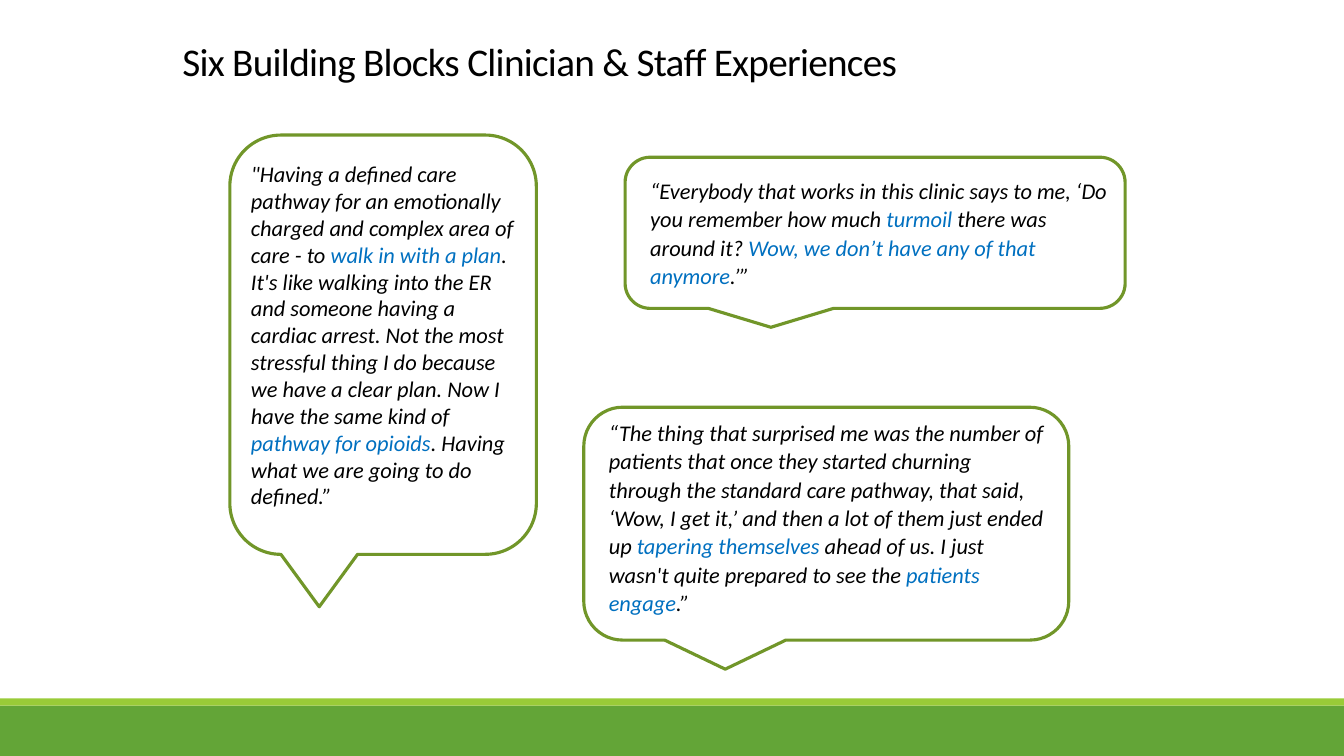
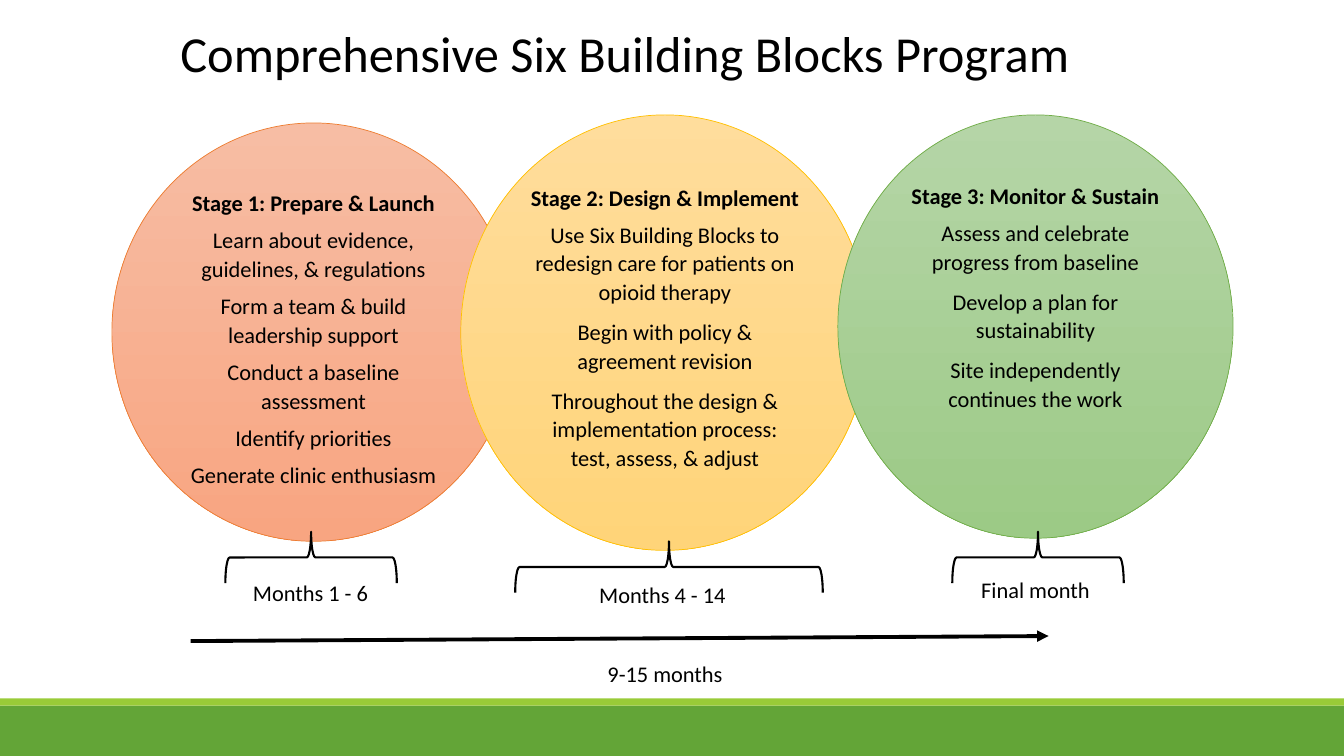
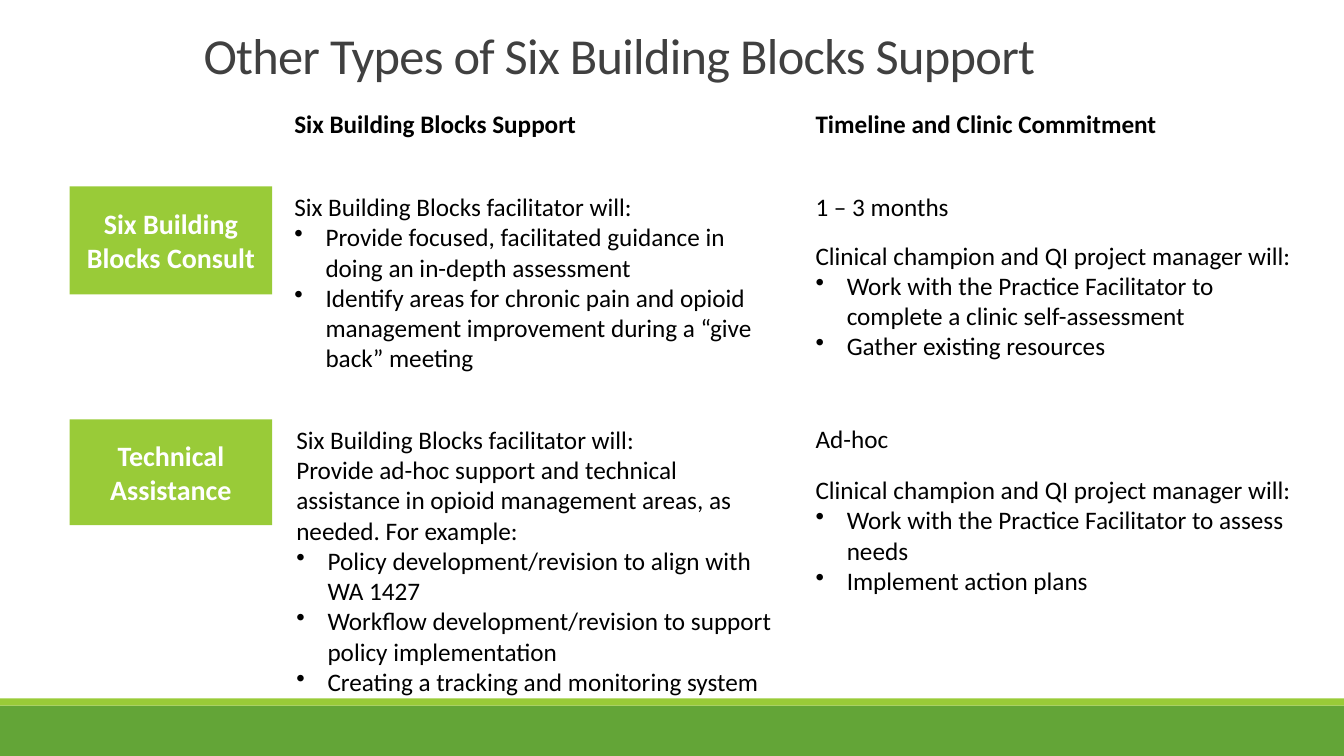
import pptx
import pptx.util
from lxml import etree
from pptx.dml.color import RGBColor
from pptx.enum.shapes import MSO_CONNECTOR, MSO_SHAPE
from pptx.enum.text import MSO_ANCHOR, PP_ALIGN
from pptx.oxml.ns import qn

PX = 9144  # EMU per px, 100 px to the inch
FONT = "Calibri"
WIDTH, HEIGHT = 1333, 750

BLACK = RGBColor(0x00, 0x00, 0x00)
WHITE = RGBColor(0xFF, 0xFF, 0xFF)
GRAY = RGBColor(0x40, 0x40, 0x40)
GREEN = RGBColor(0x63, 0xA5, 0x37)
LIME = RGBColor(0x99, 0xCB, 0x38)
OLIVE = RGBColor(0x71, 0x96, 0x29)
BLUE = RGBColor(0x00, 0x70, 0xC0)

# ---- Content: quotes (every second run is highlighted) ----
QUOTES = [
    dict(bubble=(228, 134, 304, 416), box=(239, 154, 281, 360), spacing=1.0, runs=[
        "\"Having a defined care pathway for an emotionally charged and complex area of care - to ",
        "walk in with a plan",
        ". It's like walking into the ER and someone having a cardiac arrest. Not the most stressful "
        "thing I do because we have a clear plan. Now I have the same kind of ",
        "pathway for opioids",
        ". Having what we are going to do defined.”"]),
    dict(bubble=(620, 156, 496, 150), box=(635, 169, 481, 124), spacing=1.06, runs=[
        "“Everybody that works in this clinic says to me, ‘Do you remember how much ",
        "turmoil",
        " there was around it? ",
        "Wow, we don’t have any of that anymore",
        ".’”"]),
    dict(bubble=(579, 404, 481, 231), box=(594, 409, 453, 210), spacing=1.06, runs=[
        "“The thing that surprised me was the number of patients that once they started churning "
        "through the standard care pathway, that said, ‘Wow, I get it,’ and then a lot of them just "
        "ended up ",
        "tapering themselves ",
        "ahead of us. I just wasn't quite prepared to see the ",
        "patients engage",
        ".”"]),
]

# ---- Content: stages (brace is centre x, centre y, span) ----
STAGES = [
    dict(oval=(111, 122, 400, 415), line=RGBColor(0xED, 0x7D, 0x31),
         top=RGBColor(0xF7, 0xBD, 0xA4), bottom=RGBColor(0xF8, 0xA5, 0x81), after=6,
         title="Stage 1: Prepare & Launch",
         items=["Learn about evidence, guidelines, & regulations",
                "Form a team & build leadership support",
                "Conduct a baseline assessment",
                "Identify priorities",
                "Generate clinic enthusiasm"],
         brace=(308, 553, 170), label="Months 1 - 6", label_box=(231, 569, 154, 37)),
    dict(oval=(457, 114, 405, 432), line=RGBColor(0xFF, 0xC0, 0x00),
         top=RGBColor(0xFF, 0xDD, 0x9C), bottom=RGBColor(0xFF, 0xD4, 0x79), after=8,
         title="Stage 2: Design & Implement",
         items=["Use Six Building Blocks to redesign care for patients on opioid therapy",
                "Begin with policy & agreement revision",
                "Throughout the design & implementation process: test, assess, & adjust"],
         brace=(663, 562, 305), label="Months 4 - 14", label_box=(580, 571, 154, 38)),
    dict(oval=(831, 114, 392, 420), line=RGBColor(0x70, 0xAD, 0x47),
         top=RGBColor(0xB5, 0xD5, 0xA7), bottom=RGBColor(0x9C, 0xCA, 0x86), after=8,
         title="Stage 3: Monitor & Sustain",
         items=["Assess and celebrate progress from baseline",
                "Develop a plan for sustainability",
                "Site independently continues the work"],
         brace=(1029, 553, 170), label="Final month", label_box=(950, 566, 154, 37)),
]
BRACE_DEPTH = 51

# ---- Content: support types (bullets start with •) ----
HEADERS = [(282, "Six Building Blocks Support"), (799, "Timeline and Clinic Commitment")]
CHAMPION = "Clinical champion and QI project manager will:"
FACILITATOR = "Six Building Blocks facilitator will:"
SUPPORTS = [
    dict(name="Six Building Blocks Consult", tile=(69, 185, 201, 107), gap=13, cells=[
        ((282, 185, 501, 192), [
            FACILITATOR,
            "•Provide focused, facilitated guidance in doing an in-depth assessment",
            "•Identify areas for chronic pain and opioid management improvement during a "
            "“give back” meeting"]),
        ((799, 185, 501, 210), [
            "1 – 3 months",
            CHAMPION,
            "•Work with the Practice Facilitator to complete a clinic self-assessment",
            "•Gather existing resources"])]),
    dict(name="Technical Assistance", tile=(69, 416, 201, 105), gap=15, cells=[
        ((284, 416, 501, 283), [
            FACILITATOR,
            "Provide ad-hoc support and technical assistance in opioid management areas, as needed. "
            "For example:",
            "•Policy development/revision to align with WA 1427",
            "•Workflow development/revision to support policy implementation",
            "•Creating a tracking and monitoring system"]),
        ((799, 415, 501, 212), [
            "Ad-hoc",
            CHAMPION,
            "•Work with the Practice Facilitator to assess needs",
            "•Implement action plans"])]),
]


# ---- Helpers ----
def emu(lengths):
    return [v * PX for v in lengths]


def add_shape(s, kind, box, fill=None, line=None, width=1):
    sp = s.shapes.add_shape(kind, *emu(box))
    sp.shadow.inherit = False
    if fill is None:
        sp.fill.background()
    else:
        sp.fill.solid()
        sp.fill.fore_color.rgb = fill
    if line is None:
        sp.line.fill.background()
    else:
        sp.line.color.rgb = line
        sp.line.width = pptx.util.Pt(width)
    return sp


def frame(sp, anchor=MSO_ANCHOR.TOP):
    tf = sp.text_frame
    tf.word_wrap = True
    tf.vertical_anchor = anchor
    return tf


def add_box(s, box, anchor=MSO_ANCHOR.TOP):
    return frame(s.shapes.add_textbox(*emu(box)), anchor)


def add_par(tf, first=False, align=PP_ALIGN.LEFT, spacing=1.0, before=0, after=0):
    p = tf.paragraphs[0] if first else tf.add_paragraph()
    p.alignment = align
    p.line_spacing = spacing
    p.space_before = pptx.util.Pt(before)
    p.space_after = pptx.util.Pt(after)
    return p


def add_run(p, text, size, color=BLACK, bold=False, italic=False):
    r = p.add_run()
    r.text = text
    r.font.name = FONT
    r.font.size = pptx.util.Pt(size)
    r.font.color.rgb = color
    r.font.bold = bold
    r.font.italic = italic
    return r


def add_bullet(p):
    pPr = p._p.get_or_add_pPr()
    pPr.set("marL", str(31 * PX))
    pPr.set("indent", str(-31 * PX))
    etree.SubElement(pPr, qn("a:buChar")).set("char", "•")


def add_label(s, box, text, anchor):
    tf = frame(add_shape(s, MSO_SHAPE.RECTANGLE, box, WHITE), anchor)
    add_run(add_par(tf, True, PP_ALIGN.CENTER), text, 16)


def new_slide(prs, title, box, size, color=BLACK, anchor=MSO_ANCHOR.TOP, tight=True):
    s = prs.slides.add_slide(prs.slide_layouts[6])
    add_shape(s, MSO_SHAPE.RECTANGLE, (0, 700, WIDTH, 50), GREEN)
    add_shape(s, MSO_SHAPE.RECTANGLE, (0, 693, WIDTH, 7), LIME)
    p = add_par(add_box(s, box, anchor), True, spacing=0.85 if tight else 1.0)
    r = add_run(p, title, size, color)
    if tight:
        r._r.get_or_add_rPr().set("spc", "-50")
    return s


# ---- Slides ----
def quotes_slide(prs):
    s = new_slide(prs, "Six Building Blocks Clinician & Staff Experiences",
                  (171, 11, 898, 78), 28, anchor=MSO_ANCHOR.BOTTOM)
    for quote in QUOTES:
        add_shape(s, MSO_SHAPE.ROUNDED_RECTANGULAR_CALLOUT, quote["bubble"], line=OLIVE, width=2.25)
        p = add_par(add_box(s, quote["box"]), True, spacing=quote["spacing"])
        for i, text in enumerate(quote["runs"]):
            add_run(p, text, 16, BLUE if i % 2 else BLACK, italic=True)


def stages_slide(prs):
    s = new_slide(prs, "Comprehensive Six Building Blocks Program",
                  (169, 17, 935, 71), 36, tight=False)
    for stage in STAGES:
        oval = add_shape(s, MSO_SHAPE.OVAL, stage["oval"], WHITE, stage["line"], 0.5)
        oval.fill.gradient()
        oval.fill.gradient_angle = 270
        for stop, color in zip(oval.fill.gradient_stops, (stage["top"], stage["bottom"])):
            stop.color.rgb = color
        tf = frame(oval)
        add_run(add_par(tf, True, PP_ALIGN.CENTER, after=6), stage["title"], 16, bold=True)
        for item in stage["items"]:
            add_run(add_par(tf, False, PP_ALIGN.CENTER, 1.07, after=stage["after"]), item, 16)

        # Brace is drawn upright, then turned about its centre
        cx, cy, span = stage["brace"]
        box = (cx - BRACE_DEPTH // 2, cy - span // 2, BRACE_DEPTH, span)
        add_shape(s, MSO_SHAPE.LEFT_BRACE, box, line=BLACK, width=1.5).rotation = 90
        add_label(s, stage["label_box"], stage["label"], MSO_ANCHOR.MIDDLE)

    # Overall timeline
    arrow = s.shapes.add_connector(MSO_CONNECTOR.STRAIGHT, *emu((189, 636, 1040, 631)))
    arrow.line.color.rgb = BLACK
    arrow.line.width = pptx.util.Pt(2.75)
    etree.SubElement(arrow.line._get_or_add_ln(), qn("a:tailEnd")).set("type", "triangle")
    etree.SubElement(arrow._element.spPr, qn("a:effectLst"))
    add_label(s, (585, 650, 149, 23), "9-15 months", MSO_ANCHOR.TOP)


def supports_slide(prs):
    s = new_slide(prs, "Other Types of Six Building Blocks Support",
                  (192, 10, 941, 98), 36, GRAY, MSO_ANCHOR.MIDDLE)
    for left, header in HEADERS:
        add_run(add_par(add_box(s, (left, 103, 439, 40)), True), header, 18, bold=True)
    for support in SUPPORTS:
        tile = add_shape(s, MSO_SHAPE.RECTANGLE, support["tile"], LIME)
        p = add_par(frame(tile, MSO_ANCHOR.MIDDLE), True, PP_ALIGN.CENTER)
        add_run(p, support["name"], 20, WHITE, bold=True)
        for box, lines in support["cells"]:
            tf = add_box(s, box)
            for i, text in enumerate(lines):
                p = add_par(tf, i == 0, before=support["gap"] if text == CHAMPION else 0)
                if text.startswith("•"):
                    add_bullet(p)
                add_run(p, text.lstrip("•"), 18)


def main():
    prs = pptx.Presentation()
    prs.slide_width, prs.slide_height = emu((WIDTH, HEIGHT))
    quotes_slide(prs)
    stages_slide(prs)
    supports_slide(prs)
    prs.save("out.pptx")


if __name__ == "__main__":
    main()
